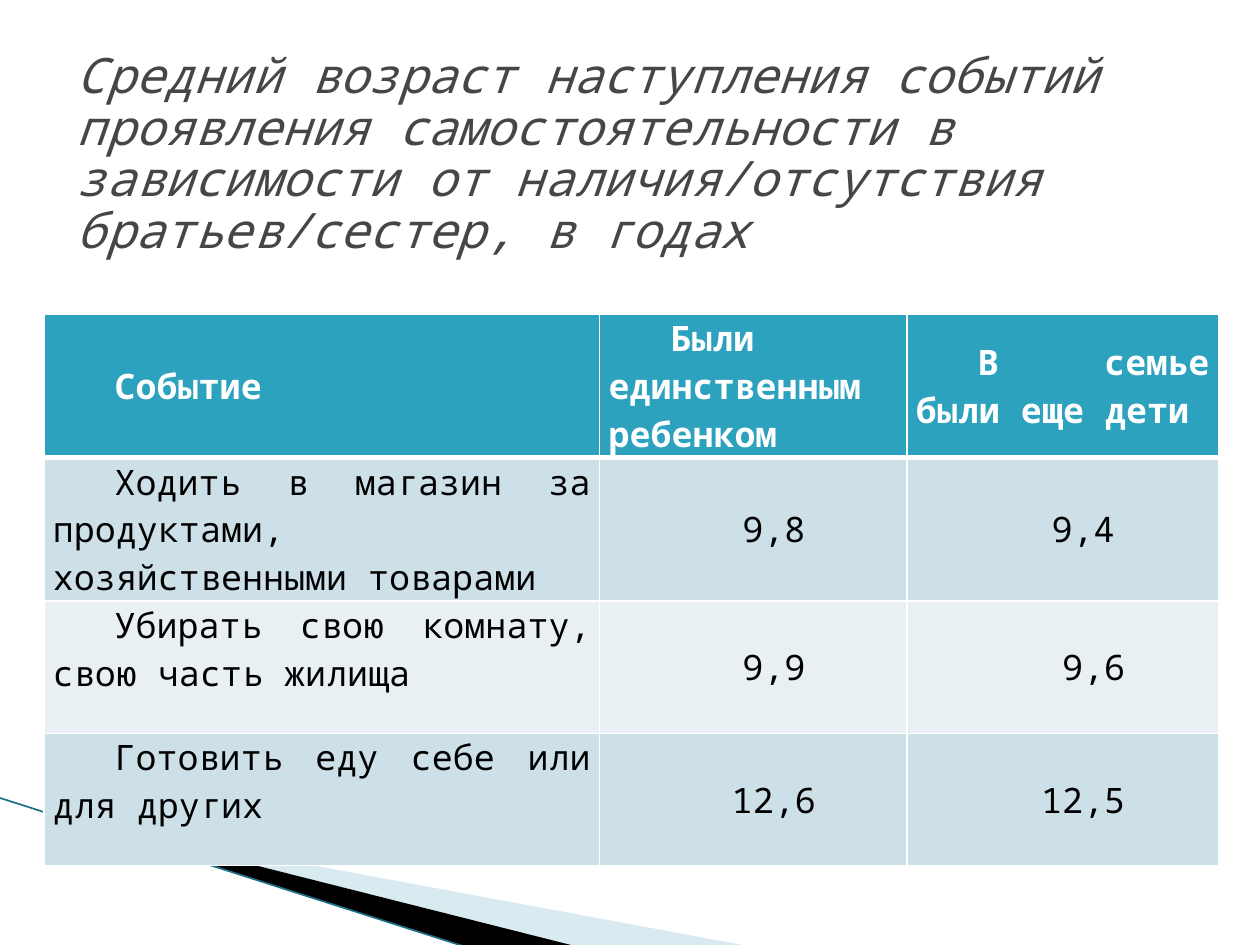
from dataclasses import dataclass

from lxml import etree
from pptx import Presentation
from pptx.dml.color import RGBColor
from pptx.enum.shapes import MSO_CONNECTOR
from pptx.enum.text import MSO_ANCHOR, MSO_AUTO_SIZE, PP_ALIGN
from pptx.oxml.ns import qn
from pptx.util import Inches, Pt

STRAIGHT = MSO_CONNECTOR.STRAIGHT
TOP, MIDDLE = MSO_ANCHOR.TOP, MSO_ANCHOR.MIDDLE
LEFT, CENTER, JUSTIFY = PP_ALIGN.LEFT, PP_ALIGN.CENTER, PP_ALIGN.JUSTIFY


@dataclass(frozen=True)
class Theme:
    font: str = "Noto Sans Mono"
    title_size: float = 27.9
    table_size: float = 20
    title: str = "464646"
    white: str = "FFFFFF"
    black: str = "000000"
    header: str = "2DA2BF"
    bands: tuple = ("CDE0E8", "E8F0F4")
    pale_wedge: str = "A0CBDC"
    edge_line: str = "1C6F86"


THEME = Theme()

TITLE = ("Средний возраст наступления событий проявления самостоятельности "
         "в зависимости от наличия/отсутствия братьев/сестер, в годах")
# The trailing spaces take part in the centring of the values
ROWS = [
    ("Событие", "Были единственным ребенком", "В семье были еще дети"),
    ("Ходить в магазин за продуктами, хозяйственными товарами ", "9,8 ", "9,4 "),
    ("Убирать свою комнату, свою часть жилища ", "9,9 ", "9,6"),
    ("Готовить еду себе или для других ", "12,6 ", "12,5 "),
]
COLUMN_WIDTHS = (4.41, 2.44, 2.47)
ROW_HEIGHTS = (1.13, 1.05, 1.05, 1.05)


def rgb(value):
    return RGBColor.from_string(value)


def add_run(paragraph, text, size, color, bold=False, italic=False):
    run = paragraph.add_run()
    run.text = text
    font = run.font
    font.name, font.size = THEME.font, Pt(size)
    font.bold, font.italic = bold, italic
    font.color.rgb = rgb(color)


def add_wedge(slide, points, color, opacity=None):
    corners = [(Inches(x), Inches(y)) for x, y in points]
    builder = slide.shapes.build_freeform(*corners[0])
    builder.add_line_segments(corners[1:], close=True)
    shape = builder.convert_to_shape()
    shape.shadow.inherit = False
    shape.line.fill.background()
    shape.fill.solid()
    shape.fill.fore_color.rgb = rgb(color)
    if opacity is not None:
        fill_color = shape.fill._xPr.find(qn("a:solidFill"))[0]
        etree.SubElement(fill_color, qn("a:alpha"), val=str(opacity * 1000))


def add_edge_line(slide, start, end):
    x1, y1, x2, y2 = map(Inches, (*start, *end))
    line = slide.shapes.add_connector(STRAIGHT, x1, y1, x2, y2)
    line.line.color.rgb = rgb(THEME.edge_line)
    line.line.width = Pt(0.95)
    etree.SubElement(line._element.spPr, qn("a:effectLst"))


def set_title(slide):
    title = slide.shapes.title
    title.left, title.top = Inches(0.51), Inches(0.3)
    title.width, title.height = Inches(8.99), Inches(1.87)
    frame = title.text_frame
    frame.word_wrap = True
    frame.auto_size = MSO_AUTO_SIZE.NONE
    frame.vertical_anchor = MIDDLE
    paragraph = frame.paragraphs[0]
    paragraph.alignment = LEFT
    paragraph.line_spacing = 0.88
    add_run(paragraph, TITLE, THEME.title_size, THEME.title, italic=True)


def set_borders(cell, top, bottom):
    properties = cell._tc.get_or_add_tcPr()
    for side, width in (("L", 1), ("R", 1), ("T", top), ("B", bottom)):
        border = etree.SubElement(properties, qn(f"a:ln{side}"), w=str(Pt(width)))
        fill = etree.SubElement(border, qn("a:solidFill"))
        etree.SubElement(fill, qn("a:srgbClr"), val=THEME.white)


def fill_cell(cell, text, row, column):
    is_header = row == 0
    is_value = not is_header and column > 0
    # Borders go before the fill in the cell properties
    set_borders(cell, top=3 if row == 1 else 1, bottom=3 if is_header else 1)
    cell.fill.solid()
    cell.fill.fore_color.rgb = rgb(
        THEME.header if is_header else THEME.bands[(row - 1) % 2])
    cell.margin_left = cell.margin_right = Inches(0.07)
    cell.margin_top = cell.margin_bottom = 0
    cell.vertical_anchor = MIDDLE if is_header or is_value else TOP
    paragraph = cell.text_frame.paragraphs[0]
    paragraph.alignment = CENTER if is_value else JUSTIFY
    indent = paragraph._p.get_or_add_pPr()
    indent.set("marL", "0")
    indent.set("indent", str(Inches(0.49)))
    add_run(paragraph, text, THEME.table_size,
            THEME.white if is_header else THEME.black, bold=is_header)


def add_age_table(slide):
    table = slide.shapes.add_table(
        len(ROWS), len(COLUMN_WIDTHS), Inches(0.35), Inches(2.49),
        Inches(sum(COLUMN_WIDTHS)), Inches(sum(ROW_HEIGHTS))).table
    for column, width in zip(table.columns, COLUMN_WIDTHS):
        column.width = Inches(width)
    for row, height in zip(table.rows, ROW_HEIGHTS):
        row.height = Inches(height)
    for row, texts in enumerate(ROWS):
        for column, text in enumerate(texts):
            fill_cell(table.cell(row, column), text, row, column)


def main():
    presentation = Presentation()
    presentation.slide_width, presentation.slide_height = Inches(10), Inches(7.5)
    slide = presentation.slides.add_slide(presentation.slide_layouts[5])

    # Corner decoration
    add_wedge(slide, [(0.55, 6.51), (5.95, 7.51), (4.56, 7.51), (0.55, 6.5)],
              THEME.pale_wedge, opacity=40)
    add_wedge(slide, [(0.53, 6.49), (4.57, 7.51), (3.72, 7.52), (0.54, 6.5)],
              THEME.black)
    add_edge_line(slide, (-0.01, 6.33), (3.71, 7.52))

    # Content
    add_age_table(slide)
    set_title(slide)

    presentation.save("out.pptx")


if __name__ == "__main__":
    main()
